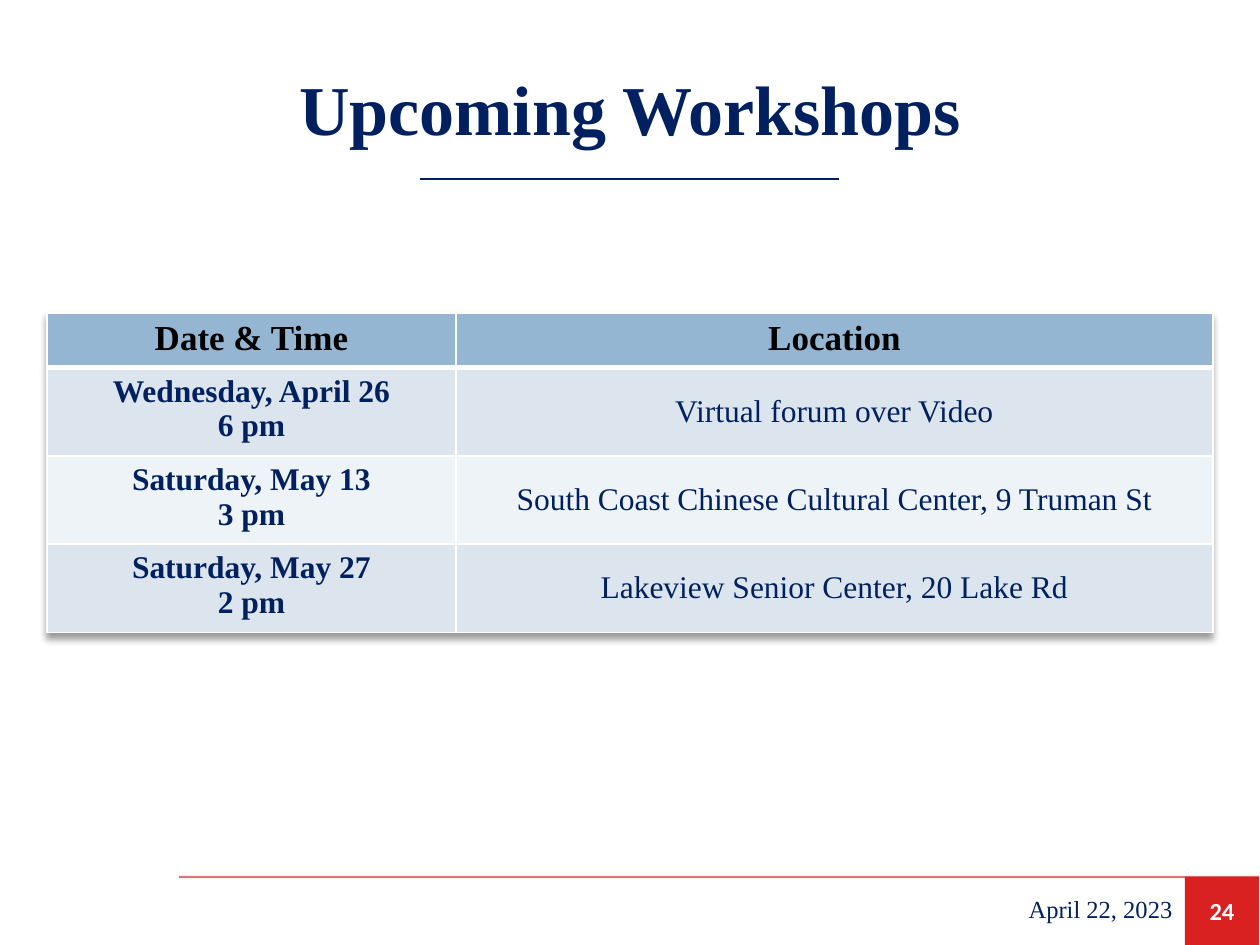
from lxml.etree import SubElement
from pptx import Presentation
from pptx.dml.color import RGBColor
from pptx.enum.shapes import MSO_CONNECTOR, MSO_SHAPE
from pptx.enum.text import MSO_ANCHOR, PP_ALIGN
from pptx.oxml import parse_xml
from pptx.oxml.ns import nsdecls, qn
from pptx.util import Emu, Pt

SCALE = 914400 / 126
SERIF = "Times New Roman"
NAVY = "002060"
WHITE = "FFFFFF"
HEADER_FILL = "94B6D2"
BAND_FILLS = ["DCE5EE", "EEF3F7"]
HEADINGS = ["Date & Time", "Location"]
WORKSHOPS = [
    (["Wednesday, April 26", "6 pm"], "Virtual forum over Video"),
    (["Saturday, May 13", "3 pm"], "South Coast Chinese Cultural Center, 9 Truman St"),
    (["Saturday, May 27", "2 pm"], "Lakeview Senior Center, 20 Lake Rd"),
]


def px(length):
    return Emu(round(length * SCALE))


def color(value):
    return RGBColor.from_string(value)


def write(frame, lines, size, ink, bold=False, align=PP_ALIGN.CENTER, font=SERIF):
    frame.word_wrap = True
    for index, line in enumerate(lines):
        paragraph = frame.paragraphs[0] if index == 0 else frame.add_paragraph()
        paragraph.alignment = align
        run = paragraph.add_run()
        run.text = line
        run.font.name = font
        run.font.size = Pt(size)
        run.font.bold = bold
        run.font.color.rgb = color(ink)


def add_rule(slide, left, top, width, ink, weight, opacity=100):
    rule = slide.shapes.add_connector(
        MSO_CONNECTOR.STRAIGHT, px(left), px(top), px(left + width), px(top))
    rule.line.color.rgb = color(ink)
    rule.line.width = Pt(weight)
    if opacity < 100:
        ink_element = rule.line._ln.find(".//" + qn("a:srgbClr"))
        SubElement(ink_element, qn("a:alpha"), val=str(opacity * 1000))
    SubElement(rule._element.spPr, qn("a:effectLst"))


def add_title(slide, left, top, width, height):
    title = slide.shapes.title
    title.left, title.top, title.width, title.height = map(px, (left, top, width, height))
    title.text_frame.vertical_anchor = MSO_ANCHOR.MIDDLE
    write(title.text_frame, ["Upcoming Workshops"], 40, NAVY, True)
    rule_width = 419
    add_rule(slide, left + (width - rule_width) // 2, top + height + 3, rule_width, NAVY, 0.75)


def style_cell(cell, fill, bottom_weight=1):
    properties = cell._tc.get_or_add_tcPr()
    for side, weight in zip("LRTB", (1, 1, 1, bottom_weight)):
        properties.append(parse_xml(
            f'<a:ln{side} {nsdecls("a")} w="{Pt(weight)}"><a:solidFill>'
            f'<a:srgbClr val="{WHITE}"/></a:solidFill></a:ln{side}>'))
    cell.fill.solid()
    cell.fill.fore_color.rgb = color(fill)


def add_schedule(slide, left, top, width, header_height, row_height):
    height = header_height + row_height * len(WORKSHOPS)
    table = slide.shapes.add_table(
        len(WORKSHOPS) + 1, 2, px(left), px(top), px(width), px(height)).table
    date_width = 409
    table.columns[0].width = px(date_width)
    table.columns[1].width = px(width - date_width)
    table._tbl.tblPr.insert(0, parse_xml(
        f'<a:effectLst {nsdecls("a")}><a:outerShdw blurRad="50800" dist="38100" '
        'dir="5400000" algn="t" rotWithShape="0"><a:srgbClr val="000000">'
        '<a:alpha val="40000"/></a:srgbClr></a:outerShdw></a:effectLst>'))
    table.rows[0].height = px(header_height)
    for column, heading in enumerate(HEADINGS):
        cell = table.cell(0, column)
        style_cell(cell, HEADER_FILL, 3)
        write(cell.text_frame, [heading], 20, "000000", True)
    for row, (times, location) in enumerate(WORKSHOPS, 1):
        table.rows[row].height = px(row_height)
        for column, lines in enumerate((times, [location])):
            cell = table.cell(row, column)
            style_cell(cell, BAND_FILLS[(row - 1) % 2])
            cell.vertical_anchor = MSO_ANCHOR.MIDDLE if column else MSO_ANCHOR.TOP
            write(cell.text_frame, lines, 18, NAVY, column == 0)


def add_footer(slide, left, top, width, height):
    add_rule(slide, left, top, width, "C80000", 1.25, 55)
    number_width, date_width = 74, 368
    number_left = left + width - number_width
    number = slide.shapes.add_shape(
        MSO_SHAPE.RECTANGLE, px(number_left), px(top), px(number_width), px(height))
    number.shadow.inherit = False
    number.fill.solid()
    number.fill.fore_color.rgb = color("D92121")
    number.line.fill.background()
    number.text_frame.vertical_anchor = MSO_ANCHOR.MIDDLE
    write(number.text_frame, ["24"], 14, WHITE, True, font="Calibri")
    date = slide.shapes.add_textbox(
        px(number_left - date_width), px(top + 7), px(date_width), px(50))
    date.text_frame.vertical_anchor = MSO_ANCHOR.MIDDLE
    write(date.text_frame, ["April 22, 2023"], 14, NAVY, align=PP_ALIGN.RIGHT)


def main():
    presentation = Presentation()
    presentation.slide_width = px(1260)
    presentation.slide_height = px(945)
    slide = presentation.slides.add_slide(presentation.slide_layouts[5])
    add_footer(slide, 179, 877, 1080, 68)
    add_title(slide, 47, 40, 1166, 136)
    add_schedule(slide, 47, 313, 1166, 52, 82)
    presentation.save("out.pptx")


if __name__ == "__main__":
    main()
